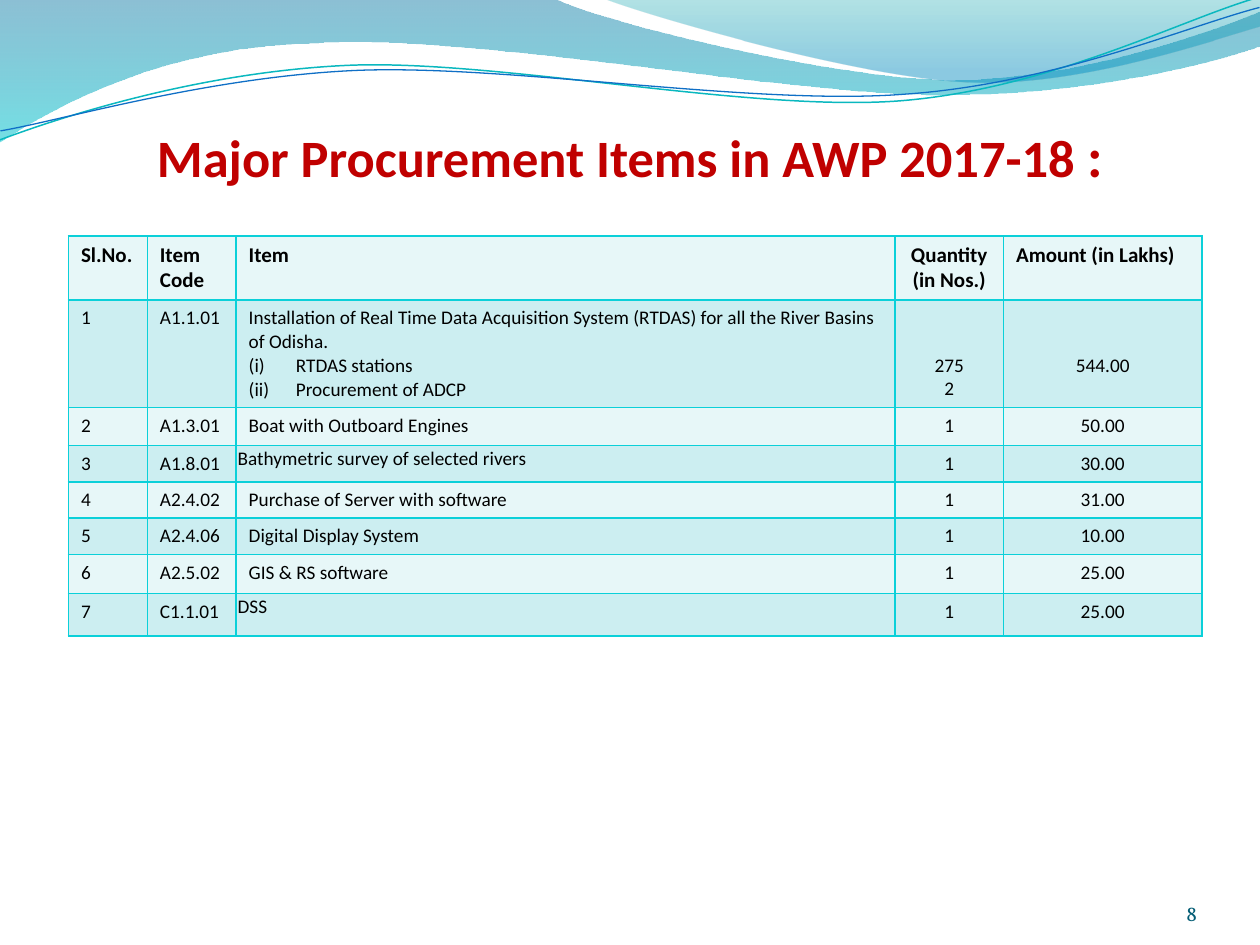
from dataclasses import dataclass

from pptx import Presentation
from pptx.dml.color import RGBColor
from pptx.enum.text import MSO_ANCHOR, PP_ALIGN
from pptx.oxml.ns import qn
from pptx.oxml.xmlchemy import OxmlElement
from pptx.util import Cm, Pt

LEFT, CENTER, RIGHT = PP_ALIGN.LEFT, PP_ALIGN.CENTER, PP_ALIGN.RIGHT
BOTTOM = MSO_ANCHOR.BOTTOM

COLORS = {
    "title": "C00000", "text": "000000", "number": "045D75",
    "border": "0BD0D9", "light": "E7F7F8", "dark": "CCEEF1",
    "teal line": "0AB8BF", "blue line": "0F6FC6",
    "wave blue": "0074A1", "wave cyan": "00C6CF",
    "crest teal": "00A1A9", "crest blue": "008BBF",
}


def rgb(name: str) -> RGBColor:
    return RGBColor.from_string(COLORS[name])


@dataclass
class Stop:
    position: float
    color: str
    opacity: int


@dataclass
class Curve:
    """Points in cm; a segment of 2 values is a line, of 6 a Bezier curve."""
    start: tuple
    segments: list
    stops: tuple = ()
    line: str = ""
    width: float = 0
    rotation: float = 0


@dataclass
class Run:
    text: str
    size: float
    color: str
    font: str = "Calibri"
    bold: bool = False


CURVES = [
    Curve((0, 0), [(11.18, -0.03),
                   (12.09, 0.43, 16.87, 1.6, 19.25, 1.6),
                   (21.67, 1.6, 24.33, 0.66, 25.4, 0.23),
                   (25.43, 0.91),
                   (24.97, 1.12, 22.1, 1.93, 18.95, 1.91),
                   (15.8, 1.91, 9.7, 0.71, 6.53, 0.86),
                   (3.28, 0.91, 1.17, 2.11, -0.03, 2.87),
                   (0, 0)],
          stops=(Stop(0, "wave blue", 45), Stop(1, "wave cyan", 55))),
    Curve((12.17, -0.03), [(12.93, 0.28, 17.32, 1.57, 19.53, 1.65),
                           (21.74, 1.75, 24.41, 0.81, 25.4, 0.53),
                           (25.4, 0),
                           (12.17, -0.03)],
          stops=(Stop(0, "crest teal", 30), Stop(0.8, "crest blue", 45))),
    Curve((-0.05, 2.22), [(1.19, 1.82, 4.02, 1.04, 7.05, 1.05),
                          (10.05, 1.07, 15.02, 2.37, 18.08, 2.29),
                          (21.13, 2.2, 23.87, 0.91, 25.41, 0.55)],
          line="teal line", width=0.85, rotation=357.3),
    Curve((-0.03, 2.04), [(1.16, 1.9, 4.18, 1.15, 7.2, 1.16),
                          (10.25, 1.18, 15.13, 2.25, 18.19, 2.16),
                          (21.21, 2.1, 23.96, 1.06, 25.44, 0.75)],
          line="blue line", width=0.75, rotation=357.3),
]

COL_WIDTHS = [1.59, 1.79, 13.28, 2.19, 4]
ROW_HEIGHTS = [1.24, 2.06, 0.76, 0.71, 0.71, 0.71, 0.78, 0.86]
ALIGNS = [LEFT, LEFT, LEFT, CENTER, CENTER]
ROWS = [
    ("Sl.No.", "Item Code", "Item", "Quantity\n(in Nos.)", "Amount (in Lakhs)"),
    ("1", "A1.1.01",
     "Installation of Real Time Data Acquisition System (RTDAS) for all the "
     "River Basins of Odisha.\nRTDAS stations\nProcurement of ADCP",
     "275\n2", "544.00"),
    ("2", "A1.3.01", "Boat with Outboard Engines", "1", "50.00"),
    ("3", "A1.8.01", "Bathymetric survey of selected rivers", "1", "30.00"),
    ("4", "A2.4.02", "Purchase of Server with software", "1", "31.00"),
    ("5", "A2.4.06", "Digital Display System", "1", "10.00"),
    ("6", "A2.5.02", "GIS & RS software", "1", "25.00"),
    ("7", "C1.1.01", "DSS", "1", "25.00"),
]
TIGHT_ROWS = (3, 7)


def bend_segments(sp, segments: list) -> None:
    """Join each three line points of a curved segment into one Bezier."""
    lines = iter(list(sp._element.iter(qn("a:lnTo"))))
    for seg in segments:
        parts = [next(lines) for _ in range(len(seg) // 2)]
        if len(parts) == 3:
            bezier = OxmlElement("a:cubicBezTo")
            parts[0].addprevious(bezier)
            for part in parts:
                bezier.append(part[0])
                part.getparent().remove(part)


def draw_curve(s, curve: Curve) -> None:
    builder = s.shapes.build_freeform(*map(Cm, curve.start))
    points = [(Cm(x), Cm(y)) for seg in curve.segments
              for x, y in zip(seg[::2], seg[1::2])]
    builder.add_line_segments(points, close=bool(curve.stops))
    sp = builder.convert_to_shape()
    bend_segments(sp, curve.segments)
    sp.shadow.inherit = False
    sp.rotation = curve.rotation
    if not curve.stops:
        sp.fill.background()
        sp.line.color.rgb = rgb(curve.line)
        sp.line.width = Pt(curve.width)
        return
    sp.line.fill.background()
    sp.fill.gradient()
    sp.fill.gradient_angle = 270
    for gs, stop in zip(sp.fill.gradient_stops, curve.stops):
        gs.position = stop.position
        gs.color.rgb = rgb(stop.color)
    for clr, stop in zip(sp._element.spPr.iter(qn("a:srgbClr")), curve.stops):
        alpha = OxmlElement("a:alpha")
        alpha.set("val", str(stop.opacity * 1000))
        clr.append(alpha)


def format_run(r, size: float, color: str, font: str, bold: bool) -> None:
    r.font.size, r.font.name, r.font.bold = Pt(size), font, bold
    r.font.color.rgb = rgb(color)


def draw_text(s, box: tuple, runs: list, align) -> None:
    tf = s.shapes.add_textbox(*map(Cm, box)).text_frame
    tf.word_wrap, tf.vertical_anchor = True, BOTTOM
    tf.margin_left = tf.margin_right = tf.margin_top = tf.margin_bottom = 0
    p = tf.paragraphs[0]
    p.alignment = align
    for run in runs:
        r = p.add_run()
        r.text = run.text
        format_run(r, run.size, run.color, run.font, run.bold)


def add_borders(cell) -> None:
    for side in ("a:lnL", "a:lnR", "a:lnT", "a:lnB"):
        ln = OxmlElement(side)
        ln.set("w", str(Pt(1)))
        fill, clr = OxmlElement("a:solidFill"), OxmlElement("a:srgbClr")
        clr.set("val", COLORS["border"])
        fill.append(clr)
        ln.append(fill)
        cell._tc.get_or_add_tcPr().append(ln)


def number_paragraph(p) -> None:
    pPr = p._p.get_or_add_pPr()
    pPr.set("marL", str(Cm(0.95)))
    pPr.set("indent", str(-Cm(0.95)))
    num = OxmlElement("a:buAutoNum")
    num.set("type", "romanLcParenBoth")
    pPr.append(num)


def draw_table(s) -> None:
    tbl = s.shapes.add_table(len(ROWS), len(COL_WIDTHS), Cm(1.38), Cm(4.76),
                             Cm(sum(COL_WIDTHS)), Cm(sum(ROW_HEIGHTS))).table
    tbl.first_row = tbl.horz_banding = False
    for col, width in zip(tbl.columns, COL_WIDTHS):
        col.width = Cm(width)
    for i, (row, height) in enumerate(zip(ROWS, ROW_HEIGHTS)):
        tbl.rows[i].height = Cm(height)
        for j, text in enumerate(row):
            cell = tbl.cell(i, j)
            add_borders(cell)
            cell.fill.solid()
            cell.fill.fore_color.rgb = rgb("dark" if i % 2 else "light")
            cell.text_frame.text = text
            for p in cell.text_frame.paragraphs:
                p.alignment = ALIGNS[j] if i or j == 3 else LEFT
                for r in p.runs:
                    format_run(r, 11 if i else 12, "text", "Calibri", i == 0)
    # Rows whose item text sits close to the cell edge
    for i in TIGHT_ROWS:
        cell = tbl.cell(i, 2)
        cell.margin_left = cell.margin_right = cell.margin_top = Cm(0.03)
        cell.margin_bottom = 0
    # Numbered sub-items, with their figures set level with them
    for p in tbl.cell(1, 2).text_frame.paragraphs[1:]:
        number_paragraph(p)
    for j in (3, 4):
        tbl.cell(1, j).margin_top = Cm(1.08)


def main() -> None:
    prs = Presentation()
    prs.slide_width, prs.slide_height = Cm(25.4), Cm(19.05)
    s = prs.slides.add_slide(prs.slide_layouts[6])
    # Wave header
    for curve in CURVES:
        draw_curve(s, curve)
    # Procurement table
    draw_table(s)
    # Slide number and title
    draw_text(s, (22.02, 17.65, 2.11, 1.02), [Run("8", 12, "number", "Vollkorn")], RIGHT)
    draw_text(s, (1.4, 2.39, 22.86, 1.42),
              [Run("Major Procurement Items in AWP 2017-18 ", 30, "title", bold=True),
               Run(": ", 32, "title", bold=True)], CENTER)
    prs.save("out.pptx")


if __name__ == "__main__":
    main()
